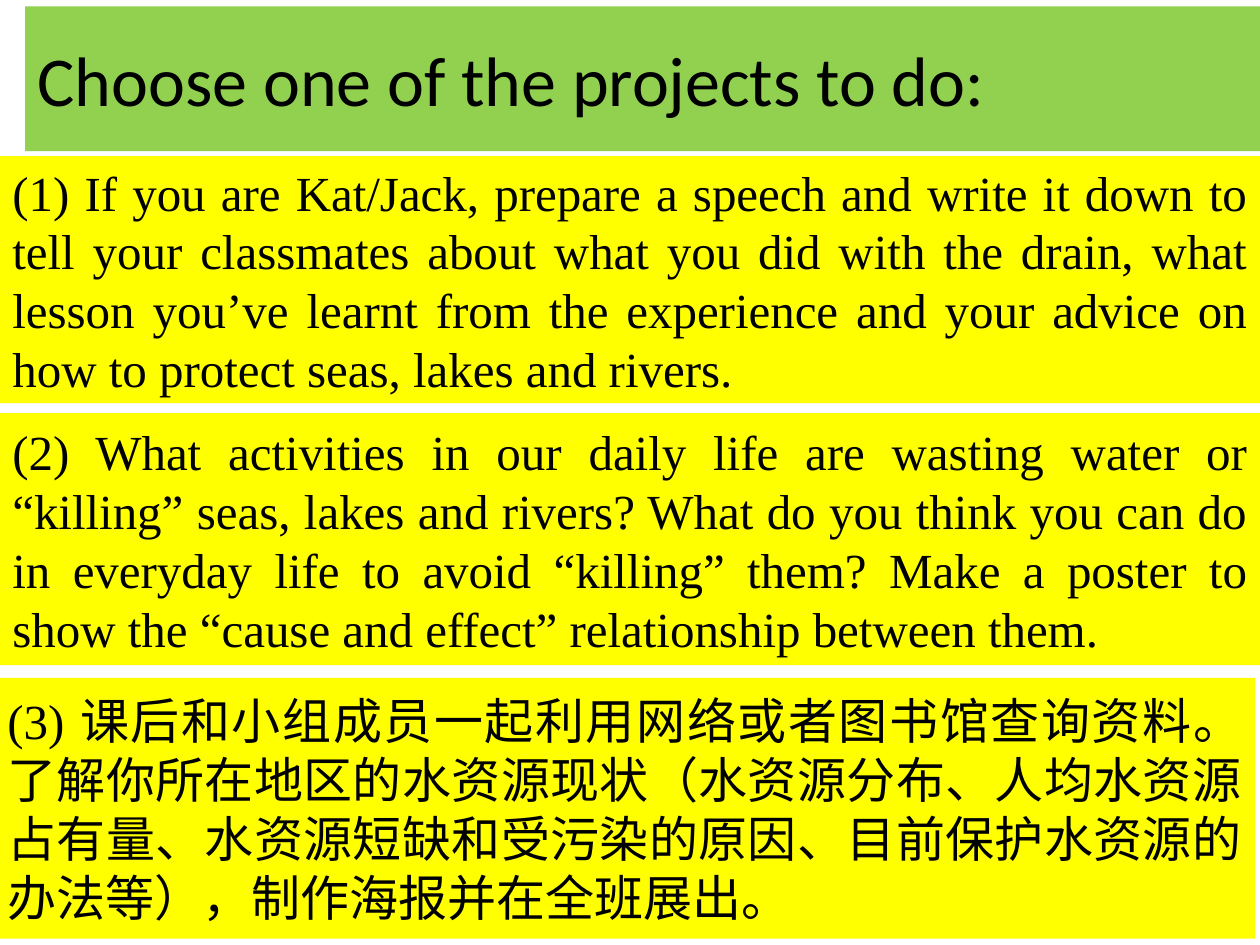
from pptx import Presentation
from pptx.dml.color import RGBColor
from pptx.enum.shapes import MSO_SHAPE as SHAPE
from pptx.enum.text import MSO_ANCHOR as ANCHOR, PP_ALIGN as ALIGN
from pptx.util import Inches, Pt

GREEN, YELLOW, BLACK = "92D050", "FFFF00", "000000"
SANS, SERIF = "Calibri", "Times New Roman"


def color(hex_text):
    return RGBColor.from_string(hex_text)


class SlideBuilder:
    def __init__(self, prs):
        self.s = prs.slides.add_slide(prs.slide_layouts[6])

    def panel(self, box, fill, runs, size, align):
        """Add a filled rectangle; runs is a list of (text, font name)."""
        sp = self.s.shapes.add_shape(SHAPE.RECTANGLE, *map(Inches, box))
        sp.shadow.inherit = False
        sp.fill.solid()
        sp.fill.fore_color.rgb = color(fill)
        sp.line.fill.background()
        tf = sp.text_frame
        tf.word_wrap = True
        tf.vertical_anchor = ANCHOR.MIDDLE
        p = tf.paragraphs[0]
        p.alignment = align
        for text, font in runs:
            r = p.add_run()
            r.text = text
            r.font.name = font
            r.font.size = Pt(size)
            r.font.color.rgb = color(BLACK)


PROJECTS = [
    ((0, 1.24, 10, 1.96), [
        ("(1) If you are Kat/Jack, prepare a speech and write it down to tell "
         "your classmates about what you did with the drain, what lesson "
         "you’ve learnt from the experience and your advice on how to protect "
         "seas, lakes and rivers.", SERIF)]),
    ((0, 3.28, 10, 2), [
        ("(2) What activities in our daily life are wasting water or “killing” "
         "seas, lakes and rivers? What do you think you can do in everyday "
         "life to avoid “killing” them? Make a poster to show the “cause and "
         "effect” relationship between them.", SERIF)]),
    ((-0.04, 5.38, 10, 2.07), [
        ("(3) ", SERIF),
        ("课后和小组成员一起利用网络或者图书馆查询资料。了解你所在地区的水资源现状"
         "（水资源分布、人均水资源占有量、水资源短缺和受污染的原因、"
         "目前保护水资源的办法等），制作海报并在全班展出。", SANS)]),
]


def main():
    prs = Presentation()
    prs.slide_width, prs.slide_height = Inches(10), Inches(7.5)
    slide = SlideBuilder(prs)

    # Title bar
    slide.panel((0.2, 0.05, 9.8, 1.15), GREEN,
                [("Choose one of the projects to do:", SANS)], 40, ALIGN.LEFT)

    # Project choices
    for box, runs in PROJECTS:
        slide.panel(box, YELLOW, runs, 28, ALIGN.JUSTIFY)

    prs.save("out.pptx")


if __name__ == "__main__":
    main()
